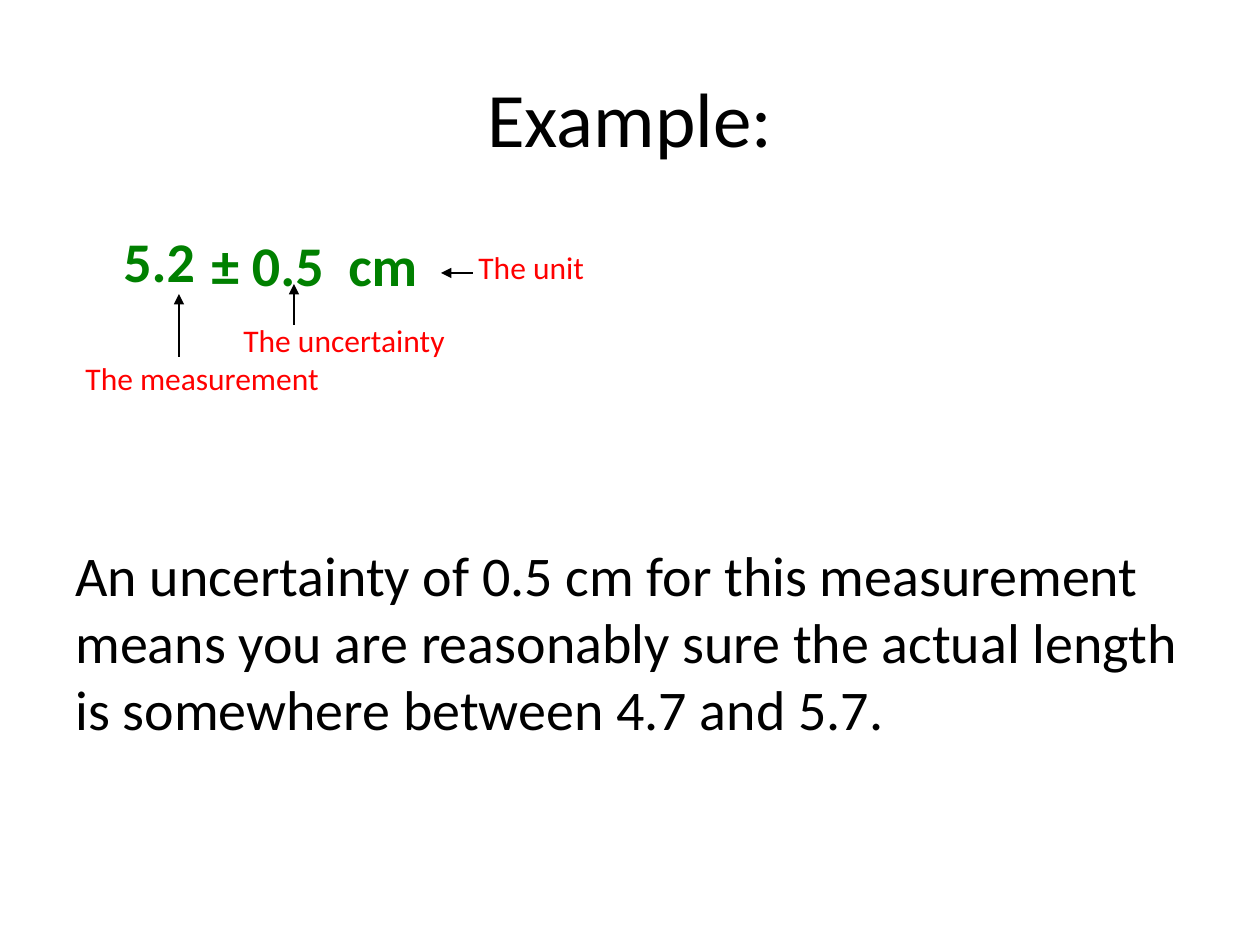
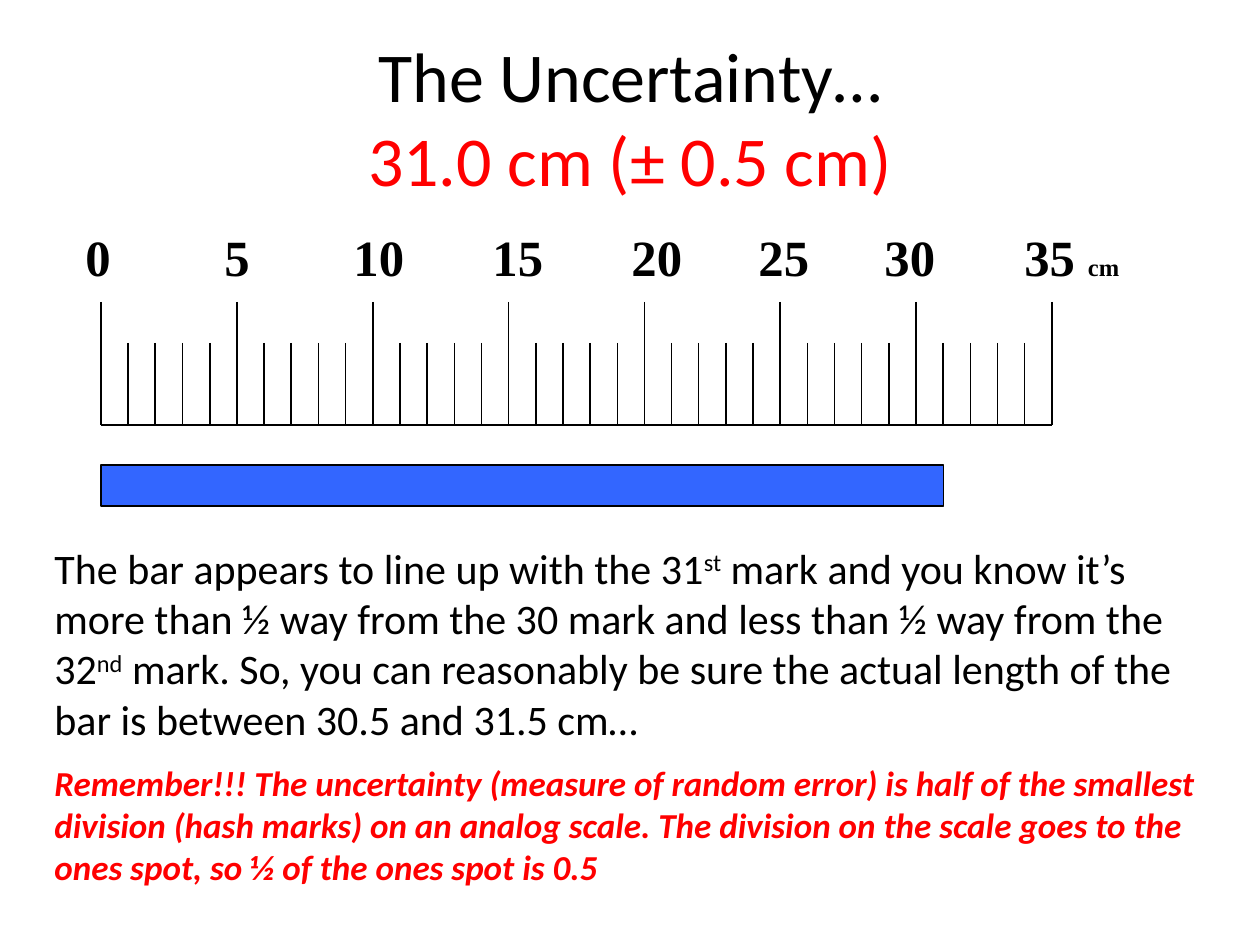
from lxml import etree
from pptx import Presentation, util as u
from pptx.dml.color import RGBColor
from pptx.enum import shapes, text
from pptx.oxml import ns

PX = 126  # px to the inch
HUES = {"ink": "000000", "red": "FF0000", "green": "008000",
        "bar": "3366FF", "paper": "FFFFFF"}
TITLE = (63, 38, 1134, 157)

# A run is (words, size, colour, styles); styles: b bold, i italic, ^ raised
HEAD_ONE = [("Example:", 44, "ink", "")]
HEAD_TWO = [("The Uncertainty…", 40, "ink", ""),
            ("31.0 cm (± 0.5 cm)", 40, "red", "")]

VALUE = [("5.2", 32, "green", "b")]
MEANING = [("An uncertainty of 0.5 cm for this measurement means you are "
            "reasonably sure the actual length is somewhere between "
            "4.7 and 5.7.", 32, "ink", "")]
NOTES = [  # box, words, size, colour, styles
    ((73, 353, 284, 50), "The measurement", 18, "red", ""),
    ((231, 315, 252, 50), "The uncertainty", 18, "red", ""),
    ((466, 242, 294, 50), "The unit", 18, "red", ""),
    ((336, 224, 126, 79), "cm", 32, "green", "b"),
    ((199, 224, 158, 79), "± 0.5", 32, "green", "b"),
]
ARROWS = [(179, 357, 179, 294), (294, 325, 294, 284), (473, 273, 441, 273)]

RULER = {"left": 101, "right": 1052, "base": 425, "tall": 302, "short": 343}
MARKS, STEP, BAR_END = 35, 5, 31
TABS = [139, 268, 407, 546, 673, 799, 939]  # label starts, from the text edge
READING = [
    ("The bar appears to line up with the 31", 24, "ink", ""),
    ("st", 24, "ink", "^"),
    (" mark and you know it’s more than ½ way from the 30 mark and less "
     "than ½ way from the 32", 24, "ink", ""),
    ("nd", 24, "ink", "^"),
    (" mark. So, you can reasonably be sure the actual length of the bar is "
     "between 30.5 and 31.5 cm…", 24, "ink", ""),
]
RULE = [("Remember!!! The uncertainty (measure of random error) is half of "
         "the smallest division (hash marks) on an analog scale. The division "
         "on the scale goes to the ones spot, so ½ of the ones spot is 0.5",
         20, "red", "bi")]


def px(n):
    return u.Emu(round(n * u.Inches(1) / PX))


def hue(name):
    return RGBColor.from_string(HUES[name])


def add_run(para, words, size, color, style, face="Calibri"):
    run = para.add_run()
    run.text = words
    font = run.font
    font.name, font.size = face, u.Pt(size)
    font.bold, font.italic = "b" in style, "i" in style
    font.color.rgb = hue(color)
    if "^" in style:
        run._r.get_or_add_rPr().set("baseline", "30000")


def add_box(parent, box, paras, gap=0, face="Calibri"):
    """Add a text box of run lists; gap is the points between paragraphs."""
    frame = parent.add_textbox(*map(px, box)).text_frame
    frame.word_wrap = True
    for i, runs in enumerate(paras):
        para = frame.add_paragraph() if i else frame.paragraphs[0]
        if i:
            para.space_before = u.Pt(gap)
        for run in runs:
            add_run(para, *run, face=face)
    return frame


def add_line(parent, ends, width=0.75, arrow=False):
    link = parent.add_connector(shapes.MSO_CONNECTOR.STRAIGHT, *map(px, ends))
    link.line.color.rgb = hue("ink")
    link.line.width = u.Pt(width)
    if arrow:
        tip = etree.SubElement(link.line._get_or_add_ln(), ns.qn("a:tailEnd"))
        tip.set("type", "triangle")
    etree.SubElement(link._element.spPr, ns.qn("a:effectLst"))


def add_slide(deck, head):
    slide = deck.slides.add_slide(deck.slide_layouts[5])
    fill = slide.background.fill
    fill.solid()
    fill.fore_color.rgb = hue("paper")
    title = slide.shapes.title
    title.left, title.top, title.width, title.height = map(px, TITLE)
    frame = title.text_frame
    frame.auto_size = text.MSO_AUTO_SIZE.NONE
    frame.vertical_anchor = text.MSO_ANCHOR.MIDDLE
    para = frame.paragraphs[0]
    para.alignment = text.PP_ALIGN.CENTER
    for i, run in enumerate(head):
        if i:
            para.add_line_break()
            para._p[-1].get_or_add_rPr().set("sz", str(run[1] * 100))
        add_run(para, *run)
    return slide.shapes


def draw_example(deck):
    parts = add_slide(deck, HEAD_ONE)
    body = add_box(parts, (63, 220, 1134, 624), [VALUE, MEANING], gap=141)
    body.paragraphs[0]._p.get_or_add_pPr().set("marL", str(px(48)))
    for box, *run in NOTES:
        add_box(parts, box, [[run]])
    for ends in ARROWS:
        add_line(parts, ends, arrow=True)


def draw_ruler(parts):
    left, right, base = RULER["left"], RULER["right"], RULER["base"]
    unit = (right - left) / MARKS
    add_line(parts, (left, base, right, base))
    for i in range(MARKS + 1):
        x = left + i * unit
        top = RULER["short"] if i % STEP else RULER["tall"]
        bold = i < 8 or i % STEP < 2
        add_line(parts, (x, top, x, base), 1 if bold else 0.75)

    names = "\t".join(str(n) for n in range(0, MARKS + 1, STEP))
    runs = [(names + " ", 29, "ink", "b"), ("cm", 14, "ink", "b")]
    frame = add_box(parts, (73, 220, 1061, 122), [runs], face="Times New Roman")
    props = frame.paragraphs[0]._p.get_or_add_pPr()
    stops = etree.SubElement(props, ns.qn("a:tabLst"))
    for x in TABS:
        etree.SubElement(stops, ns.qn("a:tab"), pos=str(px(x)), algn="l")

    bar = parts.add_shape(shapes.MSO_SHAPE.RECTANGLE, px(left), px(465),
                          px(BAR_END * unit), px(41))
    bar.shadow.inherit = False
    bar.fill.solid()
    bar.fill.fore_color.rgb = hue("bar")
    bar.line.color.rgb = hue("ink")
    bar.line.width = u.Pt(0.75)


def draw_reading(deck):
    parts = add_slide(deck, HEAD_TWO)
    draw_ruler(parts.add_group_shape().shapes)
    add_box(parts, (42, 536, 1187, 364), [READING, RULE], gap=10)


def main():
    deck = Presentation()
    deck.slide_width, deck.slide_height = px(1260), px(945)
    draw_example(deck)
    draw_reading(deck)
    deck.save("out.pptx")


if __name__ == "__main__":
    main()
